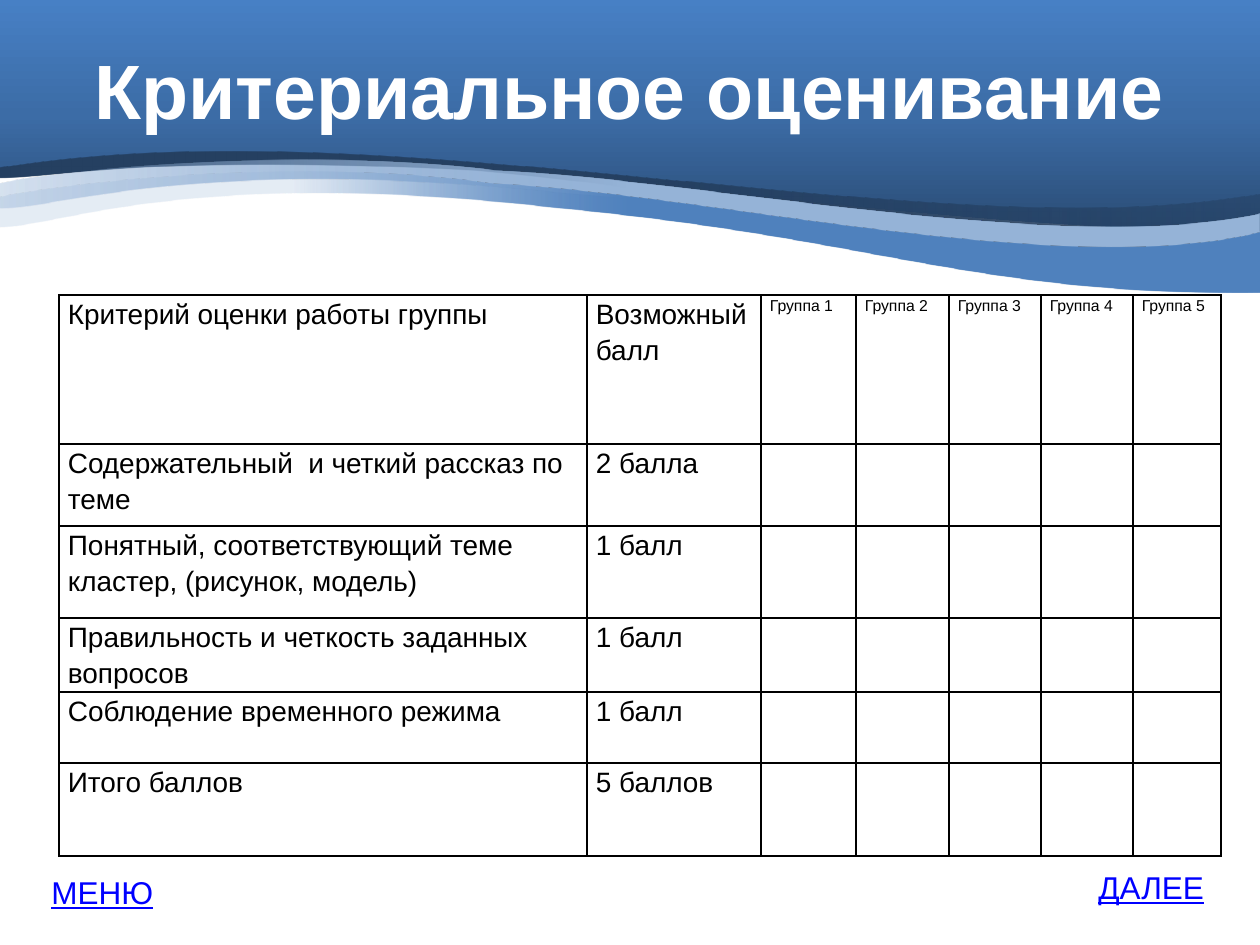
from lxml import etree
from pptx import Presentation
from pptx import util as u
from pptx.dml.color import RGBColor
from pptx.enum import text
from pptx.oxml import parse_xml
from pptx.oxml.ns import nsdecls, qn

PX = u.Inches(1) / 126  # one px in EMU
THEME = {
    "font": "Arial",
    "title": (44, "FFFFFF"), "body": (16, "000000"),
    "group": (9, "000000"), "link": (18, "0000FF"),
    "border": "000000",
    # gradient stops: position %, colour, opacity %
    "header": [(0, "2A4C75", 100), (50, "3C6CA6", 100), (100, "4780C5", 100)],
    "dark": [(0, "254061", 50), (50, "254061", 100), (100, "254061", 100)],
    "light": [(0, "95B3D7", 100), (50, "95B3D7", 100), (100, "95B3D7", 21)],
    "blue": [(0, "4F81BD", 100), (50, "4F81BD", 100), (77, "95B3D7", 12)],
}


def px(*lengths):
    return [u.Emu(round(length * PX)) for length in lengths]


def add_span(para, words, style):
    size, colour = THEME[style]
    span = para.add_run()
    span.text = words
    span.font.name = THEME["font"]
    span.font.size = u.Pt(size)
    span.font.color.rgb = RGBColor.from_string(colour)
    return span


deck = Presentation()
deck.slide_width, deck.slide_height = px(1260, 945)
page = deck.slides.add_slide(deck.slide_layouts[5])

# Header and waves: two numbers make a line, six make a cubic curve
waves = [
    ("header", 270, [(-1, -1), (1260, -1), (1260, 231),
                     (839, 231, 363, 116, -1, 168)]),
    ("dark", 180, [(1264, 193), (1264, 231), (982, 268, 791, 198, 474, 171),
                   (152, 154, 59, 178, 0, 178), (0, 168),
                   (402, 105, 941, 253, 1264, 193)]),
    ("light", 180, [(1260, 213), (1260, 266), (975, 268, 873, 217, 557, 192),
                    (190, 155, 59, 209, 0, 208), (0, 207, -1, 199, 0, 183),
                    (58, 171, 291, 145, 494, 170),
                    (703, 179, 1063, 256, 1260, 213)]),
    ("blue", 180, [(1260, 232), (1260, 292), (975, 295, 873, 237, 557, 208),
                   (190, 166, 59, 227, 0, 227), (0, 224, -1, 217, 0, 197),
                   (58, 185, 291, 155, 494, 184),
                   (703, 193, 1063, 281, 1260, 232)]),
]
for name, angle, outline in waves * 2:  # two layers deepen the translucent parts
    builder = page.shapes.build_freeform(*px(*outline[0]))
    builder.add_line_segments([px(*part[-2:]) for part in outline[1:]], close=True)
    wave = builder.convert_to_shape()
    wave.shadow.inherit = False
    wave.line.fill.background()
    geometry = wave.element.spPr.find(qn("a:custGeom"))

    # Bend the straight segments that have control points
    for part, segment in zip(outline[1:], list(geometry.iter(qn("a:lnTo")))):
        if len(part) == 2:
            continue
        curve = etree.Element(qn("a:cubicBezTo"))
        for x, y in (px(*part[:2]), px(*part[2:4])):
            etree.SubElement(curve, qn("a:pt"),
                             x=str(x - wave.left), y=str(y - wave.top))
        curve.append(segment[0])
        segment.getparent().replace(segment, curve)

    stops = "".join(
        f'<a:gs pos="{place * 1000}"><a:srgbClr val="{colour}">'
        f'<a:alpha val="{opacity * 1000}"/></a:srgbClr></a:gs>'
        for place, colour, opacity in THEME[name])
    geometry.addnext(parse_xml(
        f'<a:gradFill {nsdecls("a")} rotWithShape="1"><a:gsLst>{stops}</a:gsLst>'
        f'<a:lin ang="{angle * 60000}" scaled="0"/></a:gradFill>'))

# Title, brought in front of the waves
title = page.shapes.title
title.left, title.top, title.width, title.height = px(63, 10, 1134, 158)
title.text_frame.vertical_anchor = text.MSO_ANCHOR.MIDDLE
para = title.text_frame.paragraphs[0]
para.alignment = text.PP_ALIGN.CENTER
add_span(para, "Критериальное оценивание", "title").font.bold = True
page.shapes.element.append(title.element)

# Criteria table
rows = [
    ["Критерий оценки работы группы", "Возможный\nбалл"]
    + [f"Группа {number}" for number in range(1, 6)],
    ["Содержательный  и четкий рассказ по теме", "2 балла"],
    ["Понятный, соответствующий теме кластер, (рисунок, модель)", "1 балл"],
    ["Правильность и четкость заданных вопросов", "1 балл"],
    ["Соблюдение временного режима", "1 балл"],
    ["Итого баллов", "5 баллов"],
]
widths = [528, 174, 95, 93, 92, 92, 88]
heights = [149, 82, 92, 74, 71, 93]
table = page.shapes.add_table(len(heights), len(widths),
                              *px(59, 295, sum(widths), sum(heights))).table
table.first_row = table.horz_banding = False
for column, width in zip(table.columns, widths):
    column.width = px(width)[0]
for row, height, entries in zip(table.rows, heights, rows):
    row.height = px(height)[0]
    for index, cell in enumerate(row.cells):
        cell.margin_left = cell.margin_right = px(9)[0]
        cell.margin_top = cell.margin_bottom = 0
        for side in ("lnL", "lnR", "lnT", "lnB"):
            border = etree.SubElement(cell._tc.get_or_add_tcPr(), qn(f"a:{side}"),
                                      w=str(u.Pt(1)))
            fill = etree.SubElement(border, qn("a:solidFill"))
            etree.SubElement(fill, qn("a:srgbClr"), val=THEME["border"])
        cell.fill.background()
        if index >= len(entries):
            continue
        for number, line in enumerate(entries[index].split("\n")):
            frame = cell.text_frame
            para = frame.add_paragraph() if number else frame.paragraphs[0]
            para.line_spacing = 1.15
            add_span(para, line, "group" if index > 1 else "body")

# Navigation labels
for label, left, top in [("ДАЛЕЕ", 1086, 862), ("МЕНЮ", 39, 867)]:
    box = page.shapes.add_textbox(*px(left, top, 139, 50))
    box.text_frame.word_wrap = True
    box.text_frame.auto_size = text.MSO_AUTO_SIZE.SHAPE_TO_FIT_TEXT
    add_span(box.text_frame.paragraphs[0], label, "link").font.underline = True

deck.save("out.pptx")
